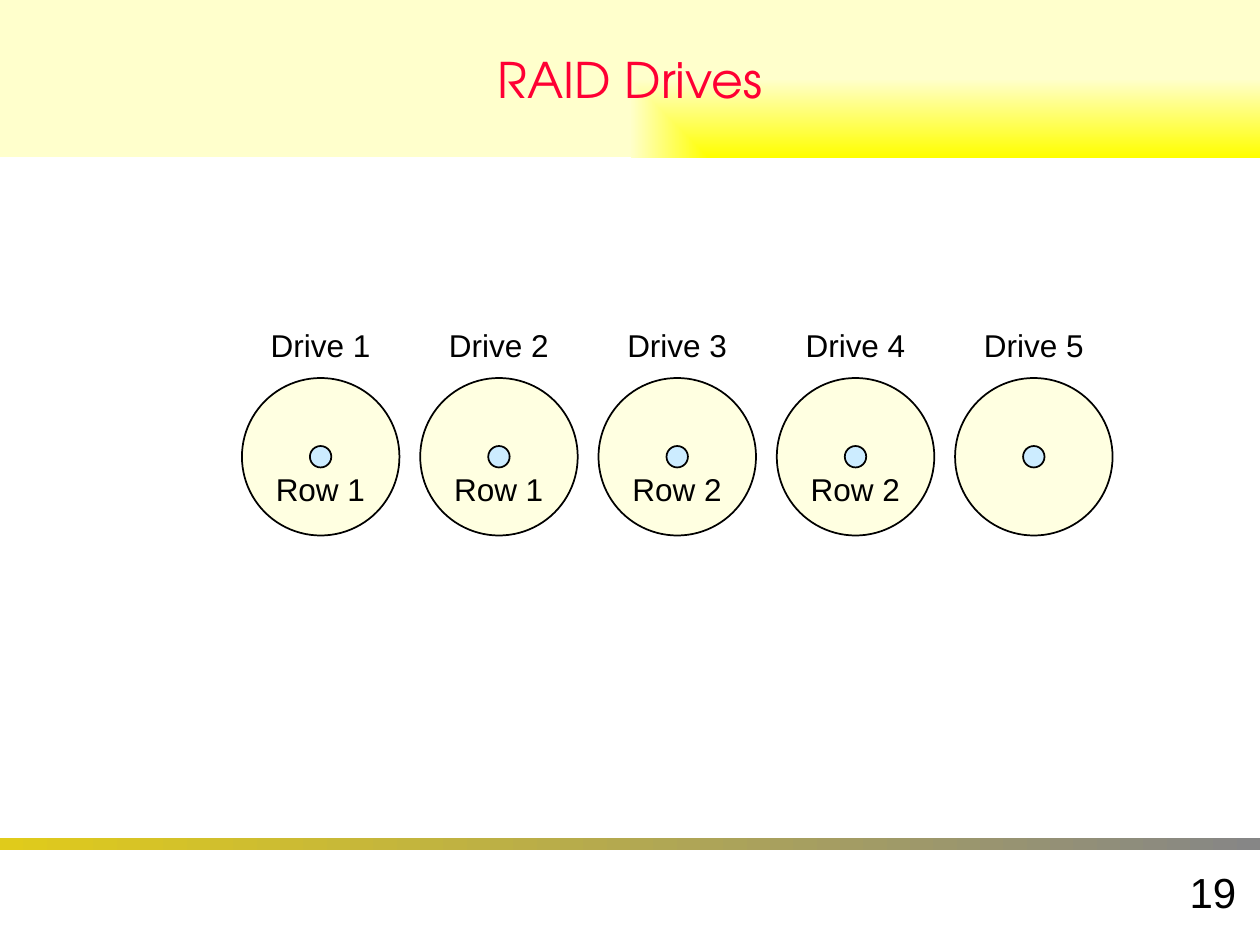
from lxml import etree
from pptx import Presentation
from pptx import util as u
from pptx.dml import color
from pptx.enum import shapes, text
from pptx.oxml import ns

Inches = u.Inches


def rgb(value):
    return color.RGBColor.from_string(value)


def add_shape(parent, kind, box, fill=None):
    sp = parent.add_shape(kind, *map(Inches, box))
    sp.shadow.inherit = False
    if fill:
        sp.fill.solid()
        sp.fill.fore_color.rgb = rgb(fill)
        sp.line.color.rgb = rgb("000000")
        sp.line.width = u.Pt(1)
    else:
        sp.line.fill.background()
    return sp


def set_gradient(sp, start, end, to_corner=False):
    sp.fill.gradient()
    for stop, value in zip(sp.fill.gradient_stops, (start, end)):
        stop.color.rgb = rgb(value)
    sp.fill.gradient_angle = 0
    if to_corner:
        grad = sp._element.spPr.find(ns.qn("a:gradFill"))
        grad.remove(grad.find(ns.qn("a:lin")))
        route = etree.SubElement(grad, ns.qn("a:path"), path="rect")
        etree.SubElement(route, ns.qn("a:fillToRect"), l="100000", t="100000")


def set_text(sp, words, size, align, font="Arial", ink="000000"):
    tf = sp.text_frame
    tf.text = words
    p = tf.paragraphs[0]
    p.alignment = align
    p.font.size = u.Pt(size)
    p.font.name = font
    p.font.color.rgb = rgb(ink)
    return tf


def add_label(slide, words, box, size=18, align=text.PP_ALIGN.LEFT):
    sp = slide.shapes.add_textbox(*map(Inches, box))
    tf = set_text(sp, words, size, align)
    tf.word_wrap = False
    return tf


def add_title(slide, box):
    sp = add_shape(slide.shapes, shapes.MSO_SHAPE.RECTANGLE, box)
    set_gradient(sp, "FFFF00", "FFFFCC", to_corner=True)
    tf = set_text(sp, "RAID Drives", 28, text.PP_ALIGN.CENTER,
                  "TeX Gyre Adventor", "FF0033")
    tf.vertical_anchor = text.MSO_ANCHOR.MIDDLE


def add_footer(slide, box):
    left, top, width, height = box
    bar = add_shape(slide.shapes, shapes.MSO_SHAPE.RECTANGLE, (left, top, width, 0.1))
    set_gradient(bar, "E0CB1B", "868686")
    number_box = (left + width - 2.17, top + 0.18, 2.08, 0.5)
    tf = add_label(slide, "19", number_box, 24, text.PP_ALIGN.RIGHT)
    tf.vertical_anchor = text.MSO_ANCHOR.MIDDLE


def add_drive(slide, name, row, box):
    left, top, size, _ = box
    group = slide.shapes.add_group_shape()
    hub = 0.17
    for diameter, fill in ((size, "FFFFE1"), (hub, "CCECFF")):
        inset = (size - diameter) / 2
        add_shape(group.shapes, shapes.MSO_SHAPE.OVAL,
                  (left + inset, top + inset, diameter, diameter), fill)
    for words, width, offset in ((name, 0.99, -0.46), (row, 0.91, 0.68)):
        if words:
            label_box = (left + (size - width) / 2, top + offset, width, 0.4)
            tf = add_label(slide, words, label_box)
            tf.auto_size = text.MSO_AUTO_SIZE.SHAPE_TO_FIT_TEXT


def add_drives(slide, box):
    left, top, width, size = box
    rows = ["Row 1", "Row 1", "Row 2", "Row 2", None]
    pitch = (width - size) / (len(rows) - 1)
    for i, row in enumerate(rows):
        add_drive(slide, f"Drive {i + 1}", row, (left + i * pitch, top, size, size))


def main():
    prs = Presentation()
    prs.slide_width, prs.slide_height = Inches(10), Inches(7.5)
    slide = prs.slides.add_slide(prs.slide_layouts[6])
    add_footer(slide, (0, 6.65, 10, 0.85))
    add_title(slide, (0, 0, 10, 1.25))
    add_drives(slide, (1.92, 3, 6.91, 1.25))
    prs.save("out.pptx")


if __name__ == "__main__":
    main()
